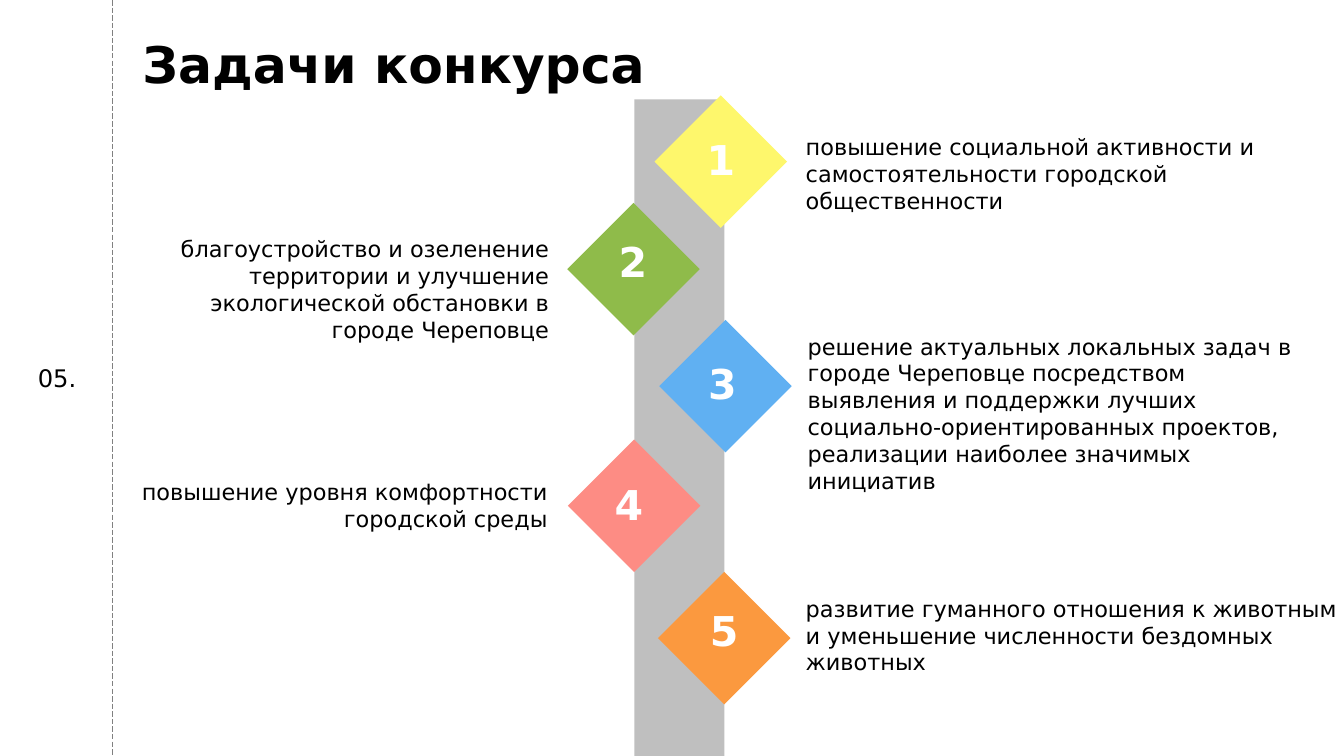
from pptx import Presentation
from pptx.dml.color import RGBColor
from pptx.enum.dml import MSO_LINE
from pptx.enum.shapes import MSO_CONNECTOR, MSO_SHAPE
from pptx.enum.text import MSO_ANCHOR, PP_ALIGN
from pptx.oxml.ns import qn
from pptx.util import Pt
from lxml.etree import SubElement

FONT = "DejaVu Sans"
WIDTH, HEIGHT = 1440, 810
DIAMOND = 142
NUMBER_W, NUMBER_H = 64.8, 36.7
NUMBER = dict(size=44, color="FFFFFF", bold=True, align=PP_ALIGN.CENTER, spacing=36.3)

# text, text box (left, top, width, height), alignment,
# diamond colour, diamond (left, top), number box (left, top) or None if inside the diamond
TASKS = [
    ("повышение социальной активности и самостоятельности городской общественности",
     (863.3, 142.6, 525, 87), PP_ALIGN.LEFT, "FEF76C", (701.3, 102.2), (740.1, 160.6)),
    ("благоустройство и озеленение территории и улучшение экологической обстановки "
     "в городе Череповце",
     (152, 252, 436.3, 116.6), PP_ALIGN.RIGHT, "8FBB4A", (607.7, 217.4), (645.8, 270)),
    ("решение актуальных локальных задач в городе Череповце посредством выявления "
     "и поддержки лучших социально-ориентированных проектов, реализации наиболее "
     "значимых инициатив",
     (865.4, 356.4, 522, 174.2), PP_ALIGN.LEFT, "60B0F2", (706.3, 342.7), (741.6, 400.3)),
    ("повышение уровня комфортности городской среды",
     (141, 512, 445.7, 58.3), PP_ALIGN.RIGHT, "FD8C84", (608.4, 470.9), (641.5, 530)),
    ("развитие гуманного отношения к животным и уменьшение численности бездомных животных",
     (863.3, 637.2, 576.7, 87), PP_ALIGN.LEFT, "FB993F", (704.9, 612.7), None),
]


def rgb(value):
    return RGBColor.from_string(value)


def write(s, text, size=24, color="000000", bold=False, align=PP_ALIGN.LEFT, spacing=None):
    tf = s.text_frame
    tf.word_wrap = True
    p = tf.paragraphs[0]
    p.alignment = align
    if spacing:
        p.line_spacing = Pt(spacing)
    r = p.add_run()
    r.text = text
    r.font.name, r.font.size, r.font.bold = FONT, Pt(size), bold
    r.font.color.rgb = rgb(color)


def add_text(sp, text, box, **fmt):
    s = sp.add_textbox(*map(Pt, box))
    tf = s.text_frame
    tf.margin_left = tf.margin_right = tf.margin_top = tf.margin_bottom = 0
    write(s, text, **fmt)


def add_filled(sp, kind, box, color):
    s = sp.add_shape(kind, *map(Pt, box))
    s.shadow.inherit = False
    s.fill.solid()
    s.fill.fore_color.rgb = rgb(color)
    s.line.fill.background()
    return s


def add_margin_line(sp, x):
    s = sp.add_connector(MSO_CONNECTOR.STRAIGHT, Pt(x), 0, Pt(x), Pt(HEIGHT))
    s.line.color.rgb = rgb("808080")
    s.line.width = Pt(0.75)
    s.line.dash_style = MSO_LINE.LONG_DASH
    SubElement(s._element.spPr, qn("a:effectLst"))


def main():
    prs = Presentation()
    prs.slide_width, prs.slide_height = Pt(WIDTH), Pt(HEIGHT)
    sp = prs.slides.add_slide(prs.slide_layouts[6]).shapes

    add_text(sp, "05.", (28.8, 384.5, 64.8, 32.4), size=25.9,
             align=PP_ALIGN.CENTER, spacing=36.3)
    add_text(sp, "Задачи конкурса", (152.6, 5.8, 750, 95.8), size=54, bold=True, spacing=94.6)
    add_margin_line(sp, 120.2)
    add_filled(sp, MSO_SHAPE.RECTANGLE, (679.7, 106.6, 96.5, 703.4), "BFBFBF")

    for number, (text, box, align, color, corner, number_at) in enumerate(TASKS, 1):
        add_text(sp, text, box, align=align)
        diamond = add_filled(sp, MSO_SHAPE.DIAMOND, (*corner, DIAMOND, DIAMOND), color)
        if number_at:
            add_text(sp, str(number), (*number_at, NUMBER_W, NUMBER_H), **NUMBER)
        else:
            diamond.text_frame.vertical_anchor = MSO_ANCHOR.MIDDLE
            write(diamond, str(number), **NUMBER)

    prs.save("out.pptx")


if __name__ == "__main__":
    main()
